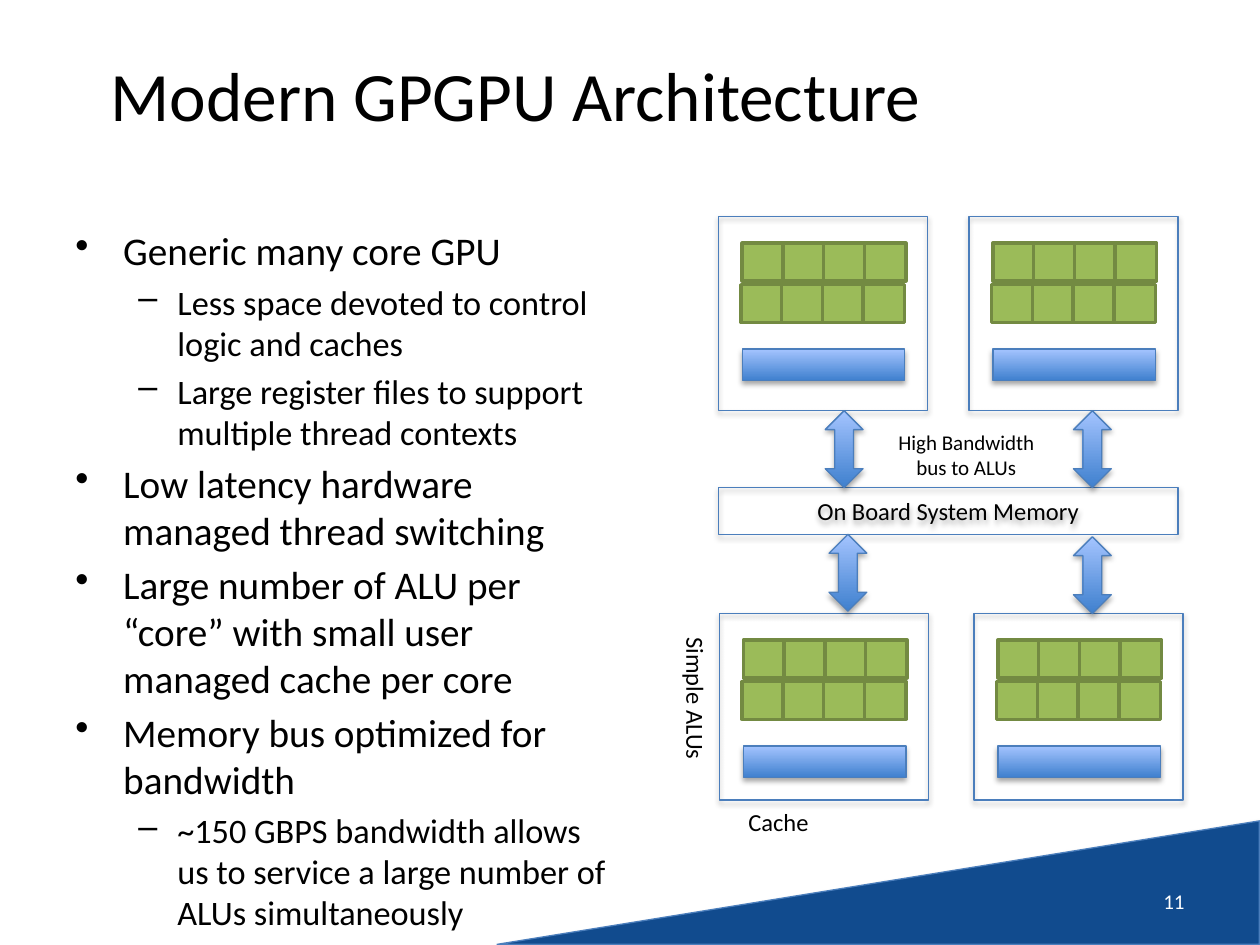
"""Build the slide on modern GPGPU architecture."""
from lxml import etree
from pptx import Presentation
from pptx.dml.color import RGBColor
from pptx.enum.shapes import MSO_SHAPE
from pptx.enum.text import MSO_ANCHOR, PP_ALIGN
from pptx.oxml.ns import qn
from pptx.util import Inches, Pt

RECTANGLE = MSO_SHAPE.RECTANGLE
ARROW = MSO_SHAPE.UP_DOWN_ARROW
TRIANGLE = MSO_SHAPE.RIGHT_TRIANGLE
TOP, MIDDLE = MSO_ANCHOR.TOP, MSO_ANCHOR.MIDDLE
LEFT, CENTER, RIGHT = PP_ALIGN.LEFT, PP_ALIGN.CENTER, PP_ALIGN.RIGHT

BLACK = RGBColor(0x00, 0x00, 0x00)
WHITE = RGBColor(0xFF, 0xFF, 0xFF)
NAVY = RGBColor(0x11, 0x4B, 0x8E)
BLUE_LINE = RGBColor(0x4B, 0x7E, 0xBC)
BLUE_DARK = RGBColor(0x3F, 0x80, 0xCE)
BLUE_LIGHT = RGBColor(0xA4, 0xC4, 0xFF)
GREEN = RGBColor(0x9B, 0xBB, 0x59)
GREEN_LINE = RGBColor(0x73, 0x8A, 0x42)

BULLETS = [
    (0, "Generic many core GPU"),
    (1, "Less space devoted to control logic and caches"),
    (1, "Large register files to support multiple thread contexts"),
    (0, "Low latency hardware managed thread switching"),
    (0, "Large number of ALU per “core” with small user managed cache per core"),
    (0, "Memory bus optimized for bandwidth"),
    (1, "~150 GBPS bandwidth allows us to service a large number of ALUs simultaneously"),
]
LEVELS = [("•", 0.38, -0.38, 22.4), ("–", 0.81, -0.31, 19.6)]
CORES = [(5.7, 1.72, 1.54), (7.69, 1.72, 1.54), (5.71, 4.87, 1.48), (7.73, 4.87, 1.48)]
ARROWS = [(6.55, 3.26), (8.52, 3.26), (6.58, 4.24), (8.52, 4.26)]


class SlideBuilder:
    """Holds the style and the current slide."""

    font_name = "Calibri"

    def __init__(self, slide):
        self.slide = slide

    def add_run(self, paragraph, text, size, color=BLACK):
        run = paragraph.add_run()
        run.text = text
        run.font.name = self.font_name
        run.font.size = Pt(size)
        run.font.color.rgb = color

    def add_text(self, left, top, width, height, lines, size,
                 color=BLACK, align=LEFT, anchor=TOP, rotation=0):
        shape = self.slide.shapes.add_textbox(
            Inches(left), Inches(top), Inches(width), Inches(height))
        shape.rotation = rotation
        frame = shape.text_frame
        frame.word_wrap = True
        frame.vertical_anchor = anchor
        for index, line in enumerate(lines):
            paragraph = frame.add_paragraph() if index else frame.paragraphs[0]
            paragraph.alignment = align
            self.add_run(paragraph, line, size, color)

    def add_bullets(self, left, top, width, height, items):
        shape = self.slide.shapes.add_textbox(
            Inches(left), Inches(top), Inches(width), Inches(height))
        frame = shape.text_frame
        frame.word_wrap = True
        for index, (level, text) in enumerate(items):
            paragraph = frame.add_paragraph() if index else frame.paragraphs[0]
            character, margin, indent, size = LEVELS[level]
            paragraph.level = level
            properties = paragraph._p.get_or_add_pPr()
            properties.set("marL", str(Inches(margin)))
            properties.set("indent", str(Inches(indent)))
            etree.SubElement(properties, qn("a:buChar")).set("char", character)
            if index:
                paragraph.space_before = Pt(4)
            self.add_run(paragraph, text, size)

    def add_shadow(self, shape):
        effects = shape._element.spPr.find(qn("a:effectLst"))
        shadow = etree.SubElement(
            effects, qn("a:outerShdw"), blurRad=str(Pt(3.1)), dist=str(Pt(1.8)),
            dir="5400000", rotWithShape="0")
        color = etree.SubElement(shadow, qn("a:srgbClr"), val=str(BLACK))
        etree.SubElement(color, qn("a:alpha"), val="35000")

    def add_shape(self, kind, left, top, width, height, fill=None,
                  line=BLUE_LINE, line_width=0.75, shadow=True):
        shape = self.slide.shapes.add_shape(
            kind, Inches(left), Inches(top), Inches(width), Inches(height))
        if fill is None:
            shape.fill.background()
        else:
            shape.fill.solid()
            shape.fill.fore_color.rgb = fill
        shape.line.color.rgb = line
        shape.line.width = Pt(line_width)
        shape.shadow.inherit = False
        if shadow:
            self.add_shadow(shape)
        return shape

    def add_gradient_shape(self, kind, left, top, width, height):
        shape = self.add_shape(kind, left, top, width, height)
        shape.fill.gradient()
        shape.fill.gradient_angle = 90
        for stop, position, color in zip(
                shape.fill.gradient_stops, (0, 1), (BLUE_DARK, BLUE_LIGHT)):
            stop.position = position
            stop.color.rgb = color

    def add_core(self, left, top, height):
        for row in range(2):
            for column in range(4):
                self.add_shape(
                    RECTANGLE, left + 0.19 - 0.01 * row + 0.97 * column / 3,
                    top + 0.21 + 0.33 * row, 0.33, 0.3,
                    GREEN, GREEN_LINE, 2, shadow=False)
        self.add_gradient_shape(RECTANGLE, left + 0.19, top + 1.05, 1.29, 0.25)
        self.add_shape(RECTANGLE, left, top, 1.66, height)

    def add_memory(self, left, top, width, height, text):
        shape = self.add_shape(RECTANGLE, left, top, width, height)
        shape.text_frame.vertical_anchor = MIDDLE
        paragraph = shape.text_frame.paragraphs[0]
        paragraph.alignment = CENTER
        self.add_run(paragraph, text, 14)


def main():
    presentation = Presentation()
    presentation.slide_width = Inches(10)
    presentation.slide_height = Inches(7.5)
    builder = SlideBuilder(presentation.slides.add_slide(presentation.slide_layouts[6]))

    corner = builder.add_shape(TRIANGLE, 6.48, 3.98, 0.98, 6.05, NAVY)
    corner.rotation = 270
    builder.add_text(0.5, 0.12, 7.19, 1.25, ["Modern GPGPU Architecture"], 39.6,
                     align=CENTER, anchor=MIDDLE)
    builder.add_bullets(0.5, 1.75, 4.47, 4.95, BULLETS)
    builder.add_text(7.17, 6.95, 2.33, 0.4, ["11"], 12, WHITE, RIGHT, MIDDLE)

    builder.add_memory(5.7, 3.87, 3.65, 0.37, "On Board System Memory")
    for left, top, height in CORES:
        builder.add_core(left, top, height)
    for left, top in ARROWS:
        builder.add_gradient_shape(ARROW, left, top, 0.3, 0.61)

    builder.add_text(6.85, 3.36, 1.64, 0.5, ["High Bandwidth", "bus to ALUs"], 12,
                     align=CENTER)
    builder.add_text(4.82, 5.49, 1.4, 0.34, ["Simple ALUs"], 14, rotation=90)
    builder.add_text(5.84, 6.36, 1.02, 0.34, ["Cache"], 14)
    presentation.save("out.pptx")


if __name__ == "__main__":
    main()
